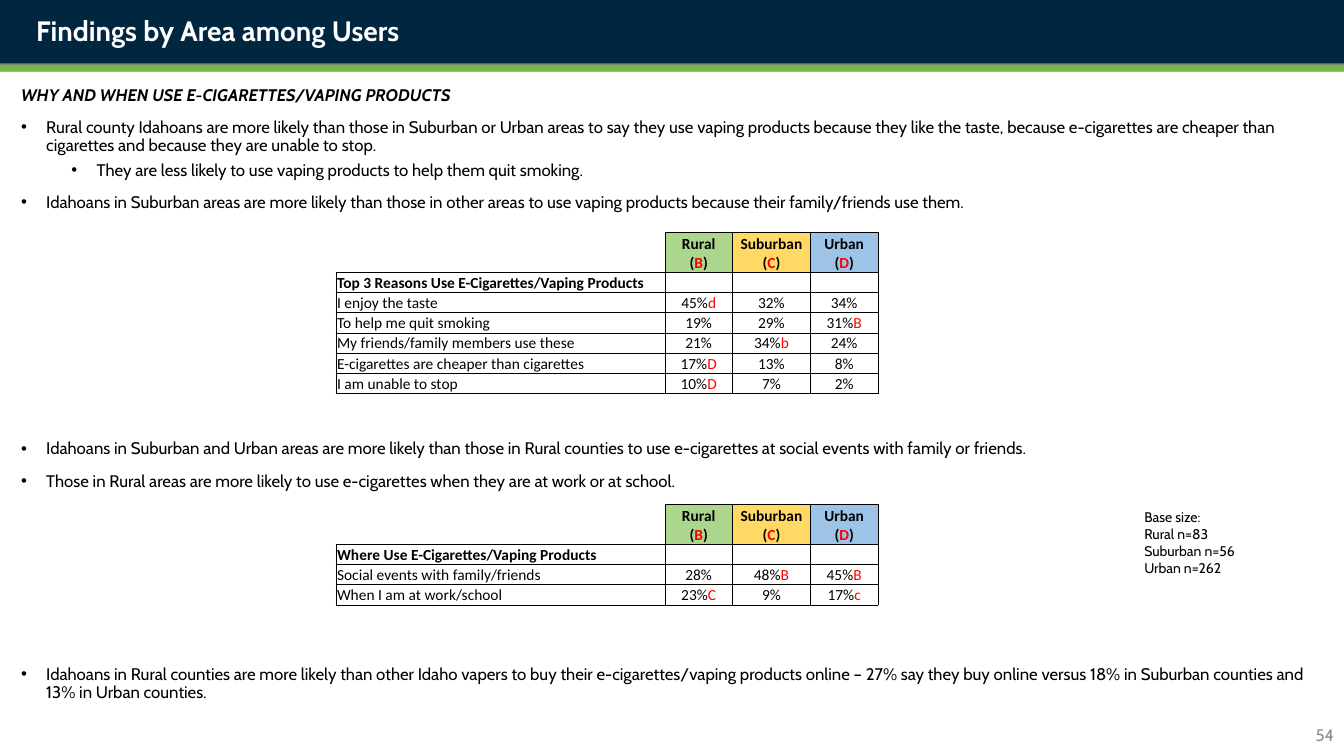
from dataclasses import dataclass

import pptx
import pptx.dml.color
import pptx.enum.shapes
import pptx.enum.text
import pptx.oxml
import pptx.oxml.ns
import pptx.util

ALIGN = pptx.enum.text.PP_ALIGN
ANCHOR = pptx.enum.text.MSO_ANCHOR


@dataclass(frozen=True)
class Theme:
    font: str = "Cabin"
    table_font: str = "Calibri"
    navy: str = "00273F"
    gray: str = "808080"
    green: str = "75BA43"
    ink: str = "000000"
    white: str = "FFFFFF"
    marker: str = "FF0000"
    page: str = "8C8C8C"
    areas: tuple = ("ACD68E", "FFD966", "9DC3E6")
    title_size: int = 20
    body_size: int = 12
    table_size: int = 11
    note_size: int = 10
    border: float = 0.5


THEME = Theme()


def rgb(color):
    return pptx.dml.color.RGBColor.from_string(color)


def xml(markup):
    return pptx.oxml.parse_xml(markup.replace(" ", f" {pptx.oxml.ns.nsdecls('a')} ", 1))


def write(frame, text, *, size=THEME.body_size, font=THEME.font, color=THEME.ink,
          bold=False, italic=False, align=ALIGN.LEFT, level=None, before=0, spacing=None):
    """Add one paragraph per line; text between bars takes the marker color."""
    for line in text.split("\n"):
        paragraph = frame.paragraphs[0]
        if paragraph.runs:
            paragraph = frame.add_paragraph()
        paragraph.alignment = align
        paragraph.space_before = pptx.util.Pt(before)
        if spacing:
            paragraph.line_spacing = spacing
        if level is not None:
            paragraph.level = level
            properties = paragraph._p.get_or_add_pPr()
            properties.set("marL", str(pptx.util.Inches(0.25 + 0.5 * level)))
            properties.set("indent", str(pptx.util.Inches(-0.25)))
            properties.append(xml('<a:buFont typeface="Arial"/>'))
            properties.append(xml('<a:buChar char="•"/>'))
        if not line:
            paragraph._p.append(xml(f'<a:endParaRPr sz="{size * 100}"/>'))
        for position, piece in enumerate(line.split("|")):
            if piece:
                run = paragraph.add_run()
                run.text = piece
                run.font.size = pptx.util.Pt(size)
                run.font.name = font
                run.font.bold = bold
                run.font.italic = italic
                run.font.color.rgb = rgb(THEME.marker if position % 2 else color)


class SlideBuilder:
    def __init__(self, deck, theme):
        self.deck = deck
        self.theme = theme
        self.slide = deck.slides.add_slide(deck.slide_layouts[6])

    def x(self, percent):
        return round(self.deck.slide_width * percent / 100)

    def y(self, percent):
        return round(self.deck.slide_height * percent / 100)

    def place(self, left, top, width, height):
        return self.x(left), self.y(top), self.x(width), self.y(height)

    def band(self, height, color):
        band = self.slide.shapes.add_shape(
            pptx.enum.shapes.MSO_SHAPE.RECTANGLE, *self.place(0, 0, 100, height))
        band.shadow.inherit = False
        band.fill.solid()
        band.fill.fore_color.rgb = rgb(color)
        band.line.fill.background()

    def rule(self, top, color, weight):
        rule = self.slide.shapes.add_connector(
            pptx.enum.shapes.MSO_CONNECTOR.STRAIGHT,
            0, self.y(top), self.x(100), self.y(top))
        rule.line.color.rgb = rgb(color)
        rule.line.width = pptx.util.Pt(weight)
        rule._element.spPr.append(xml("<a:effectLst />"))

    def text(self, box, text="", anchor=ANCHOR.TOP, **style):
        frame = self.slide.shapes.add_textbox(*self.place(*box)).text_frame
        frame.word_wrap = True
        frame.vertical_anchor = anchor
        if text:
            write(frame, text, **style)
        return frame

    def cell(self, cell, text, fill=None, sides="LRTB", **style):
        cell.margin_left = cell.margin_right = cell.margin_top = pptx.util.Inches(0.01)
        cell.margin_bottom = 0
        cell.vertical_anchor = ANCHOR.BOTTOM
        properties = cell._tc.get_or_add_tcPr()
        for side in "LRTB":
            paint = (f'<a:solidFill><a:srgbClr val="{self.theme.ink}"/></a:solidFill>'
                     if side in sides else "<a:noFill/>")
            width = pptx.util.Pt(self.theme.border)
            properties.append(xml(f'<a:ln{side} w="{width}">{paint}</a:ln{side}>'))
        if fill:
            cell.fill.solid()
            cell.fill.fore_color.rgb = rgb(fill)
        else:
            cell.fill.background()
        write(cell.text_frame, text, size=self.theme.table_size,
              font=self.theme.table_font, **style)

    def area_table(self, top, heading, findings):
        widths = (24.47, 5.03, 5.8, 5.03)
        row_height = 2.67
        rows = [("", *AREAS), (heading, "", "", ""), *findings]
        table = self.slide.shapes.add_table(
            len(rows), len(widths),
            *self.place(25, top, sum(widths), row_height * (len(rows) + 1))).table
        table.first_row = table.horz_banding = False
        for column, width in zip(table.columns, widths):
            column.width = self.x(width)
        for r, row in enumerate(rows):
            table.rows[r].height = self.y(row_height * (1 if r else 2))
            for c, value in enumerate(row):
                self.cell(table.cell(r, c), value,
                          fill=self.theme.areas[c - 1] if r == 0 and c else None,
                          sides="LRTB" if r or c else "RB",
                          bold=r < 2, align=ALIGN.CENTER if c else ALIGN.LEFT)


AREAS = ("Rural\n(|B|)", "Suburban\n(|C|)", "Urban\n(|D|)")
REASONS = [
    ("I enjoy the taste", "45%|d", "32%", "34%"),
    ("To help me quit smoking", "19%", "29%", "31%|B"),
    ("My friends/family members use these", "21%", "34%|b", "24%"),
    ("E-cigarettes are cheaper than cigarettes", "17%|D", "13%", "8%"),
    ("I am unable to stop", "10%|D", "7%", "2%"),
]
PLACES = [
    ("Social events with family/friends", "28%", "48%|B", "45%|B"),
    ("When I am at work/school", "23%|C", "9%", "17%|c"),
]
FINDINGS = [
    (0, 10, "Rural county Idahoans are more likely than those in Suburban or Urban areas to say they use vaping products because they like the taste, because e-cigarettes are cheaper than cigarettes and because they are unable to stop."),
    (1, 5, "They are less likely to use vaping products to help them quit smoking."),
    (0, 10, "Idahoans in Suburban areas are more likely than those in other areas to use vaping products because their family/friends use them."),
    (0, 163, "Idahoans in Suburban and Urban areas are more likely than those in Rural counties to use e-cigarettes at social events with family or friends."),
    (0, 10, "Those in Rural areas are more likely to use e-cigarettes when they are at work or at school."),
    (0, 125, "Idahoans in Rural counties are more likely than other Idaho vapers to buy their e-cigarettes/vaping products online – 27% say they buy online versus 18% in Suburban counties and 13% in Urban counties."),
]


def main():
    deck = pptx.Presentation()
    deck.slide_width = pptx.util.Inches(13.33)
    deck.slide_height = pptx.util.Inches(7.5)
    page = SlideBuilder(deck, THEME)

    page.band(9.47, THEME.gray)
    page.band(8.4, THEME.navy)
    page.text((1.95, 1.07, 76.8, 5.87), "Findings by Area among Users",
              size=THEME.title_size, color=THEME.white, bold=True)
    findings = page.text((0.83, 10.8, 98.4, 79.33),
                         "WHY AND WHEN USE E-CIGARETTES/VAPING PRODUCTS",
                         bold=True, italic=True, spacing=0.9)
    for level, before, finding in FINDINGS:
        write(findings, finding, level=level, before=before, spacing=0.9)
    page.text((77.5, 94.53, 22.5, 5.33), "54", anchor=ANCHOR.MIDDLE,
              color=THEME.page, align=ALIGN.RIGHT)
    page.rule(9, THEME.green, 4.5)
    page.area_table(30.7, "Top 3 Reasons Use E-Cigarettes/Vaping Products", REASONS)
    page.area_table(66.67, "Where Use E-Cigarettes/Vaping Products", PLACES)
    page.text((84.4, 66.67, 10.05, 10.27),
              "Base size:\nRural n=83\nSuburban n=56\nUrban n=262", size=THEME.note_size)
    deck.save("out.pptx")


if __name__ == "__main__":
    main()
